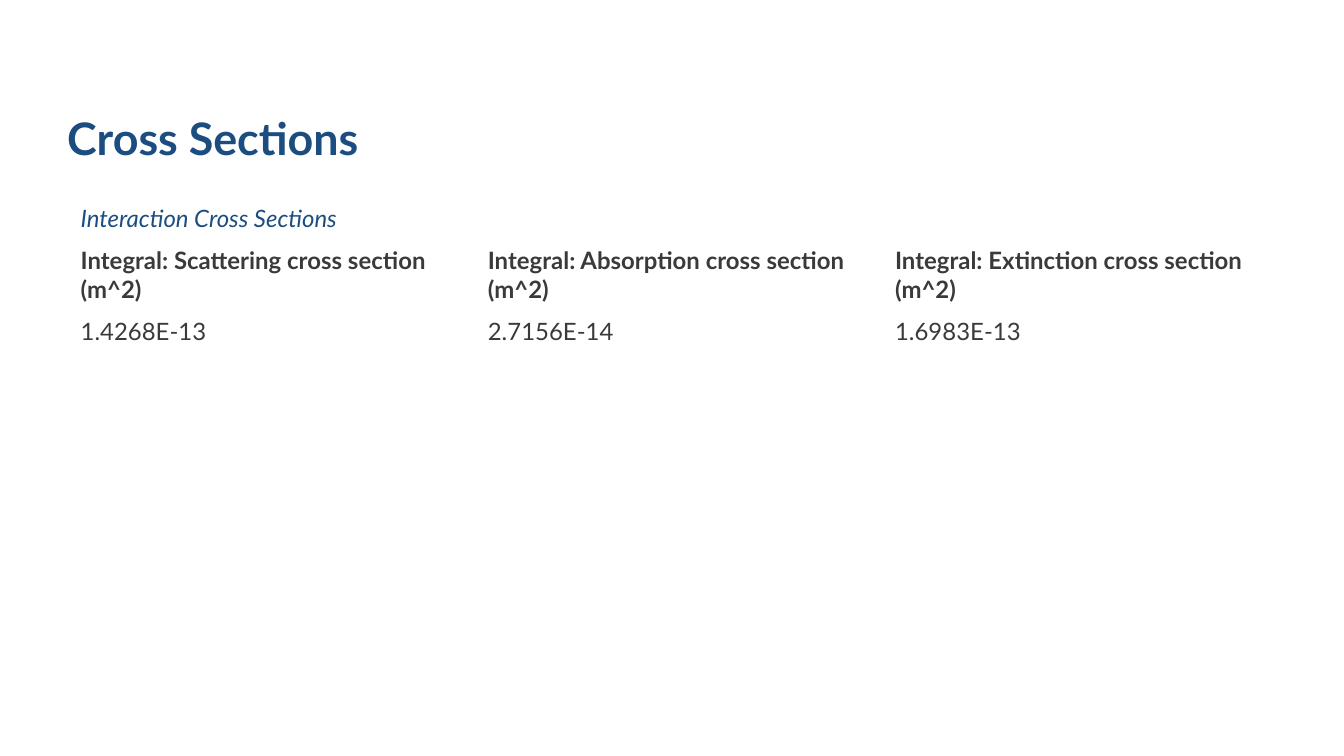
"""Build a slide with a title and a table of interaction cross sections."""
from dataclasses import dataclass

from pptx import Presentation
from pptx.dml.color import RGBColor
from pptx.enum.text import MSO_ANCHOR, PP_ALIGN
from pptx.util import Inches, Pt

LEFT = PP_ALIGN.LEFT
MIDDLE = MSO_ANCHOR.MIDDLE
WIDE = Inches(10)
HIGH = WIDE * 9 // 16


@dataclass(frozen=True)
class Theme:
    font: str = "Lato"
    blue: str = "1B4D81"
    dark: str = "393A39"
    head: float = 24
    body: float = 12.8


@dataclass(frozen=True)
class Section:
    name: str
    value: str


@dataclass(frozen=True)
class Grid:
    left: float = 0.05
    top: float = 0.26
    col: float = 0.303
    row: float = 0.05


THEME = Theme()
GRID = Grid()
SECTIONS = (
    Section("Scattering", "1.4268E-13"),
    Section("Absorption", "2.7156E-14"),
    Section("Extinction", "1.6983E-13"),
)


def write(frame, text: str, *, size: float = THEME.body, color: str = THEME.dark,
          bold: bool = False, italic: bool = False, space: float = 1.0) -> None:
    frame.text = text
    line = frame.paragraphs[0]
    line.alignment = LEFT
    line.line_spacing = space
    font = line.runs[0].font
    font.name, font.size = THEME.font, Pt(size)
    font.bold, font.italic = bold, italic
    font.color.rgb = RGBColor.from_string(color)


def draw_title(slide, text: str) -> None:
    title = slide.shapes.title
    title.left, title.top = int(WIDE * GRID.left), int(HIGH * 0.115)
    title.width, title.height = int(WIDE * 0.908), int(HIGH * 0.144)
    frame = title.text_frame
    frame.margin_left = 0
    frame.vertical_anchor = MIDDLE
    write(frame, text, size=THEME.head, color=THEME.blue, bold=True, space=0.9)


def draw_table(slide, head: str, items: tuple[Section, ...]) -> None:
    count = len(items)
    table = slide.shapes.add_table(
        3, count, int(WIDE * GRID.left), int(HIGH * GRID.top),
        int(WIDE * GRID.col * count), int(HIGH * GRID.row * 3)).table
    table.first_row = table.horz_banding = False
    for cell in table.iter_cells():
        cell.fill.background()
    table.cell(0, 0).merge(table.cell(0, count - 1))
    write(table.cell(0, 0).text_frame, head, color=THEME.blue, italic=True)
    for col, item in enumerate(items):
        name = f"Integral: {item.name} cross section (m^2)"
        write(table.cell(1, col).text_frame, name, bold=True)
        write(table.cell(2, col).text_frame, item.value)


def main() -> None:
    deck = Presentation()
    deck.slide_width, deck.slide_height = WIDE, HIGH
    slide = deck.slides.add_slide(deck.slide_layouts.get_by_name("Title Only"))
    draw_title(slide, "Cross Sections")
    draw_table(slide, "Interaction Cross Sections", SECTIONS)
    deck.save("out.pptx")


if __name__ == "__main__":
    main()
